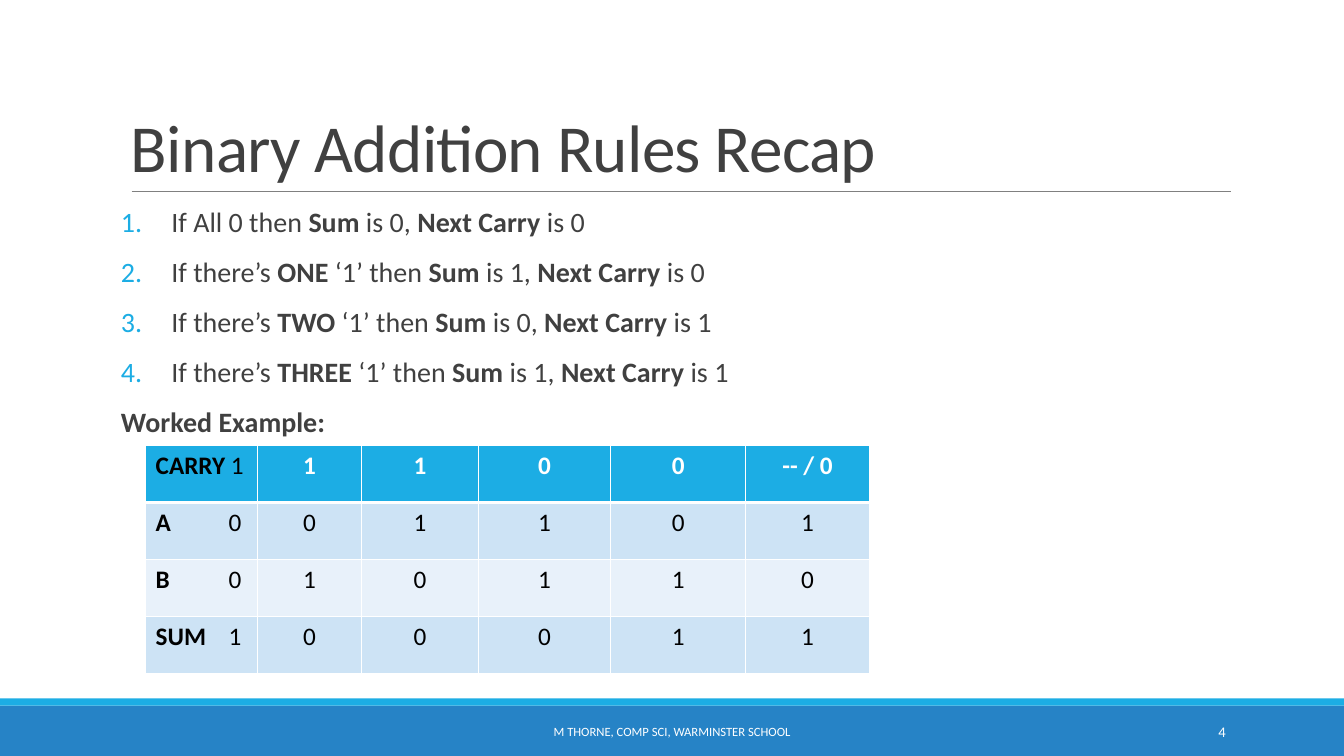
"""Build the binary addition rules slide with its worked example table."""
from lxml import etree
from pptx import Presentation
from pptx.dml.color import RGBColor
from pptx.enum.shapes import MSO_CONNECTOR, MSO_SHAPE
from pptx.enum.text import MSO_ANCHOR, PP_ALIGN
from pptx.oxml.ns import qn
from pptx.util import Cm, Pt

LEFT, CENTER, RIGHT = PP_ALIGN.LEFT, PP_ALIGN.CENTER, PP_ALIGN.RIGHT
TOP, MIDDLE, BOTTOM = MSO_ANCHOR.TOP, MSO_ANCHOR.MIDDLE, MSO_ANCHOR.BOTTOM
RECTANGLE, STRAIGHT = MSO_SHAPE.RECTANGLE, MSO_CONNECTOR.STRAIGHT

COLORS = {
    "text": "404040", "black": "000000", "white": "FFFFFF", "rule": "808080",
    "accent": "1CADE4", "footer": "2683C6", "band": "CDE3F5", "pale": "E8F1FA",
}


def add_run(paragraph, text, size, color, bold=False):
    run = paragraph.add_run()
    run.text = text
    run.font.name = "Calibri"
    run.font.size = Pt(size)
    run.font.bold = bold
    run.font.color.rgb = RGBColor.from_string(COLORS[color])
    return run


def add_text_box(slide, left, top, width, height, anchor):
    shape = slide.shapes.add_textbox(Cm(left), Cm(top), Cm(width), Cm(height))
    shape.text_frame.word_wrap = True
    shape.text_frame.vertical_anchor = anchor
    return shape.text_frame


presentation = Presentation()
presentation.slide_width = Cm(33.87)
presentation.slide_height = Cm(19.05)
slide = presentation.slides.add_slide(presentation.slide_layouts[6])

for top, height, color in [(17.78, 1.27, "footer"), (17.6, 0.18, "accent")]:
    bar = slide.shapes.add_shape(RECTANGLE, 0, Cm(top), presentation.slide_width, Cm(height))
    bar.shadow.inherit = False
    bar.fill.solid()
    bar.fill.fore_color.rgb = RGBColor.from_string(COLORS[color])
    bar.line.fill.background()

title_rule = slide.shapes.add_connector(STRAIGHT, Cm(3.32), Cm(4.83), Cm(31.01), Cm(4.83))
title_rule.line.color.rgb = RGBColor.from_string(COLORS["rule"])
title_rule.line.width = Pt(0.5)
etree.SubElement(title_rule._element.spPr, qn("a:effectLst"))

title = add_text_box(slide, 3.05, 0.79, 27.94, 4.04, BOTTOM).paragraphs[0]
title.line_spacing = 0.85
title_run = add_run(title, "Binary Addition Rules Recap", 48, "text")
title_run.font._element.set("spc", "-50")

rules = [
    [("If All 0 then ", False), ("Sum", True), (" is 0, ", False),
     ("Next Carry ", True), ("is 0", False)],
]
for count, sum_bit, carry_bit in [("ONE", 1, 0), ("TWO", 0, 1), ("THREE", 1, 1)]:
    rules.append([
        ("If there’s ", False), (count, True), (" ‘1’ then ", False), ("Sum", True),
        (f" is {sum_bit}, ", False), ("Next Carry ", True), (f"is {carry_bit}", False),
    ])

body = add_text_box(slide, 3.05, 5.13, 27.94, 11.18, TOP)
body.margin_left = body.margin_right = 0
for index, runs in enumerate(rules + [[("Worked Example:", True)]]):
    paragraph = body.paragraphs[0] if index == 0 else body.add_paragraph()
    paragraph.line_spacing = 0.9
    paragraph.space_before = Pt(12)
    paragraph.space_after = Pt(2)
    if index < len(rules):
        properties = paragraph._p.get_or_add_pPr()
        properties.set("marL", str(Cm(1.27)))
        properties.set("indent", str(-Cm(1.27)))
        bullet_color = etree.SubElement(properties, qn("a:buClr"))
        etree.SubElement(bullet_color, qn("a:srgbClr"), val=COLORS["accent"])
        etree.SubElement(properties, qn("a:buFont"), typeface="+mj-lt")
        etree.SubElement(properties, qn("a:buAutoNum"), type="arabicPeriod")
    for text, bold in runs:
        add_run(paragraph, text, 20, "text", bold)

addition_rows = [
    ("CARRY", " 1", ["1", "1", "0", "0", "-- / 0"], "accent"),
    ("A", "\t0", ["0", "1", "1", "0", "1"], "band"),
    ("B", "\t0", ["1", "0", "1", "1", "0"], "pale"),
    ("SUM", "\t1", ["0", "0", "0", "1", "1"], "band"),
]
column_widths = [2.82, 2.62, 2.95, 3.33, 3.4, 3.12]
table = slide.shapes.add_table(
    len(addition_rows), len(column_widths), Cm(3.67), Cm(11.23),
    Cm(sum(column_widths)), Cm(5.74)).table
table.horz_banding = False
for column, width in zip(table.columns, column_widths):
    column.width = Cm(width)

for row_index, (label, leading_bit, bits, fill) in enumerate(addition_rows):
    table.rows[row_index].height = Cm(1.435)
    is_header = row_index == 0
    for column_index, text in enumerate([label] + bits):
        cell = table.cell(row_index, column_index)
        paragraph = cell.text_frame.paragraphs[0]
        if column_index == 0:
            paragraph.alignment = LEFT
            tabs = etree.SubElement(paragraph._p.get_or_add_pPr(), qn("a:tabLst"))
            etree.SubElement(tabs, qn("a:tab"), pos=str(Cm(2.16)), algn="r")
            add_run(paragraph, text, 18, "black", True)
            add_run(paragraph, leading_bit, 18, "black")
        else:
            paragraph.alignment = CENTER
            add_run(paragraph, text, 18, "white" if is_header else "black", is_header)
        cell_properties = cell._tc.get_or_add_tcPr()
        for side in ("L", "R", "T", "B"):
            is_thick = (row_index, side) in [(0, "B"), (1, "T")]
            border = etree.SubElement(
                cell_properties, qn(f"a:ln{side}"), w=str(Pt(3 if is_thick else 1)))
            border_fill = etree.SubElement(border, qn("a:solidFill"))
            etree.SubElement(border_fill, qn("a:srgbClr"), val=COLORS["white"])
        cell.fill.solid()
        cell.fill.fore_color.rgb = RGBColor.from_string(COLORS[fill])

footers = [
    (10.24, 13.39, CENTER, "M THORNE, COMP SCI, WARMINSTER SCHOOL", 9),
    (27.51, 3.63, RIGHT, "4", 10.5),
]
for left, width, alignment, text, size in footers:
    paragraph = add_text_box(slide, left, 17.93, width, 1.02, MIDDLE).paragraphs[0]
    paragraph.alignment = alignment
    add_run(paragraph, text, size, "white")

presentation.save("out.pptx")
